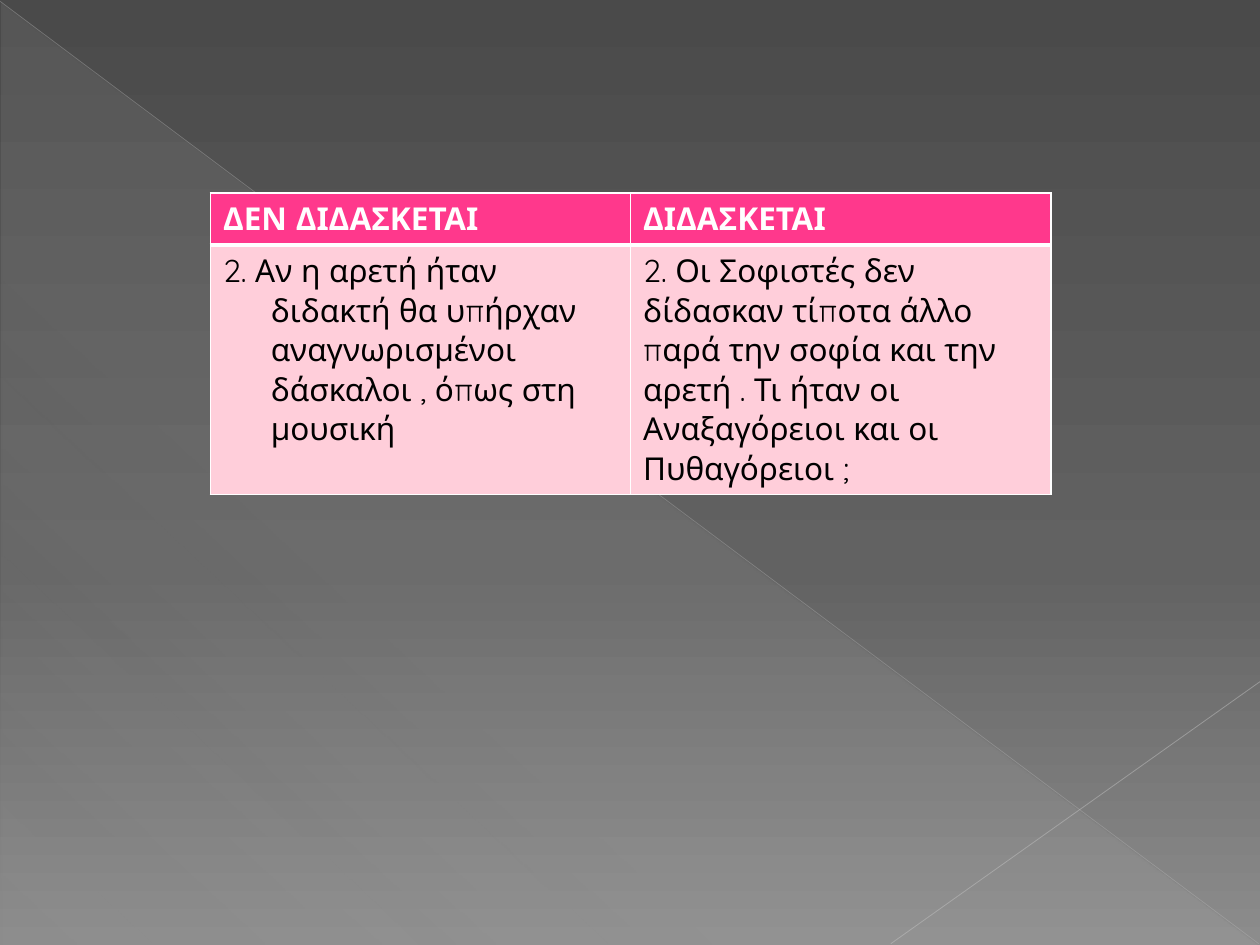
from lxml.etree import SubElement
from pptx import Presentation
from pptx.dml.color import RGBColor
from pptx.enum.shapes import MSO_CONNECTOR, MSO_SHAPE
from pptx.oxml.ns import qn
from pptx.util import Inches, Pt

ROWS = [
    ("ΔΕΝ ΔΙΔΑΣΚΕΤΑΙ", "ΔΙΔΑΣΚΕΤΑΙ"),
    ("2. Αν η αρετή ήταν διδακτή θα υπήρχαν αναγνωρισμένοι δάσκαλοι , όπως στη μουσική",
     "2. Οι Σοφιστές δεν δίδασκαν τίποτα άλλο παρά την σοφία και την αρετή . "
     "Τι ήταν οι Αναξαγόρειοι και οι Πυθαγόρειοι ;"),
]
THEME = {
    "font": "Quicksand", "size": 18, "border": "FFFFFF",
    "head": {"fill": "FF388C", "text": "FFFFFF", "bold": True},
    "body": {"fill": "FFCEDA", "text": "000000", "bold": False},
    # gradient stops: position %, colour, opacity %
    "backdrop": [(0, "4A4A4A", 100), (60, "626262", 100), (100, "8C8C8C", 100)],
    "triangle": [(0, "D2D2D2", 10), (70, "D2D2D2", 8), (100, "D2D2D2", 1)],
}
# start, end, colour, width, opacity %
DIAGONALS = [
    ((0, 0.01), (9.99, 7.49), "BFBFBF", 0.39, 35),
    ((10, 5.41), (7.07, 7.49), "C6C6C6", 0.47, 45),
]
TABLE_LEFT, TABLE_TOP, TABLE_WIDTH = 1.67, 1.53, 6.67
ROW_HEIGHTS = (0.41, 1.9)
HANGING = 0.38


def add_color(parent, color, opacity=100):
    clr = SubElement(parent, qn("a:srgbClr"), val=color)
    if opacity < 100:
        SubElement(clr, qn("a:alpha"), val=str(opacity * 1000))


def set_gradient(fill, props, stops, angle):
    """Fill the properties element with a linear gradient, angle clockwise."""
    fill.solid()
    solid = props.find(qn("a:solidFill"))
    grad = solid.makeelement(qn("a:gradFill"), {"rotWithShape": "1"})
    props.replace(solid, grad)
    stop_list = SubElement(grad, qn("a:gsLst"))
    for pos, color, opacity in stops:
        gs = SubElement(stop_list, qn("a:gs"), pos=str(pos * 1000))
        add_color(gs, color, opacity)
    SubElement(grad, qn("a:lin"), ang=str(angle * 60000), scaled="0")


def add_diagonal(s, start, end, color, width, opacity):
    line = s.shapes.add_connector(MSO_CONNECTOR.STRAIGHT, *map(Inches, start + end))
    line.line.width = Pt(width)
    line.line.color.rgb = RGBColor.from_string(color)
    clr = line.line._ln.find(".//" + qn("a:srgbClr"))
    SubElement(clr, qn("a:alpha"), val=str(opacity * 1000))
    SubElement(line._element.spPr, qn("a:effectLst"))


def set_borders(cell, widths):
    tc_pr = cell._tc.get_or_add_tcPr()
    for side, width in widths.items():
        ln = SubElement(tc_pr, qn("a:ln" + side), w=str(Pt(width)))
        add_color(SubElement(ln, qn("a:solidFill")), THEME["border"])


def fill_cell(cell, text, style, borders):
    set_borders(cell, borders)
    cell.fill.solid()
    cell.fill.fore_color.rgb = RGBColor.from_string(style["fill"])
    cell.text = text
    font = cell.text_frame.paragraphs[0].runs[0].font
    font.color.rgb = RGBColor.from_string(style["text"])
    formats = {"name": THEME["font"], "size": Pt(THEME["size"]), "bold": style["bold"]}
    for name, value in formats.items():
        setattr(font, name, value)


def add_comparison(s):
    frame = s.shapes.add_table(
        len(ROWS), len(ROWS[0]), Inches(TABLE_LEFT), Inches(TABLE_TOP),
        Inches(TABLE_WIDTH), Inches(sum(ROW_HEIGHTS)))
    table = frame.table
    for i, (texts, height) in enumerate(zip(ROWS, ROW_HEIGHTS)):
        table.rows[i].height = Inches(height)
        style = THEME["body" if i else "head"]
        borders = {"L": 1, "R": 1, "T": 3 if i else 1, "B": 1 if i else 3}
        for j, text in enumerate(texts):
            fill_cell(table.cell(i, j), text, style, borders)
    p_pr = table.cell(1, 0).text_frame.paragraphs[0]._p.get_or_add_pPr()
    p_pr.set("marL", str(Inches(HANGING)))
    p_pr.set("indent", str(-Inches(HANGING)))


def main():
    prs = Presentation()
    prs.slide_width, prs.slide_height = Inches(10), Inches(7.5)
    s = prs.slides.add_slide(prs.slide_layouts[6])

    backdrop = s.background.fill
    backdrop.solid()
    set_gradient(backdrop, s.element.find(".//" + qn("p:bgPr")), THEME["backdrop"], 90)

    triangle = s.shapes.add_shape(
        MSO_SHAPE.RIGHT_TRIANGLE, *map(Inches, (0.01, 0.02, 9.98, 7.48)))
    triangle.shadow.inherit = False
    triangle.line.fill.background()
    set_gradient(triangle.fill, triangle._element.spPr, THEME["triangle"], 133)

    for diagonal in DIAGONALS:
        add_diagonal(s, *diagonal)
    add_comparison(s)
    prs.save("out.pptx")


if __name__ == "__main__":
    main()
